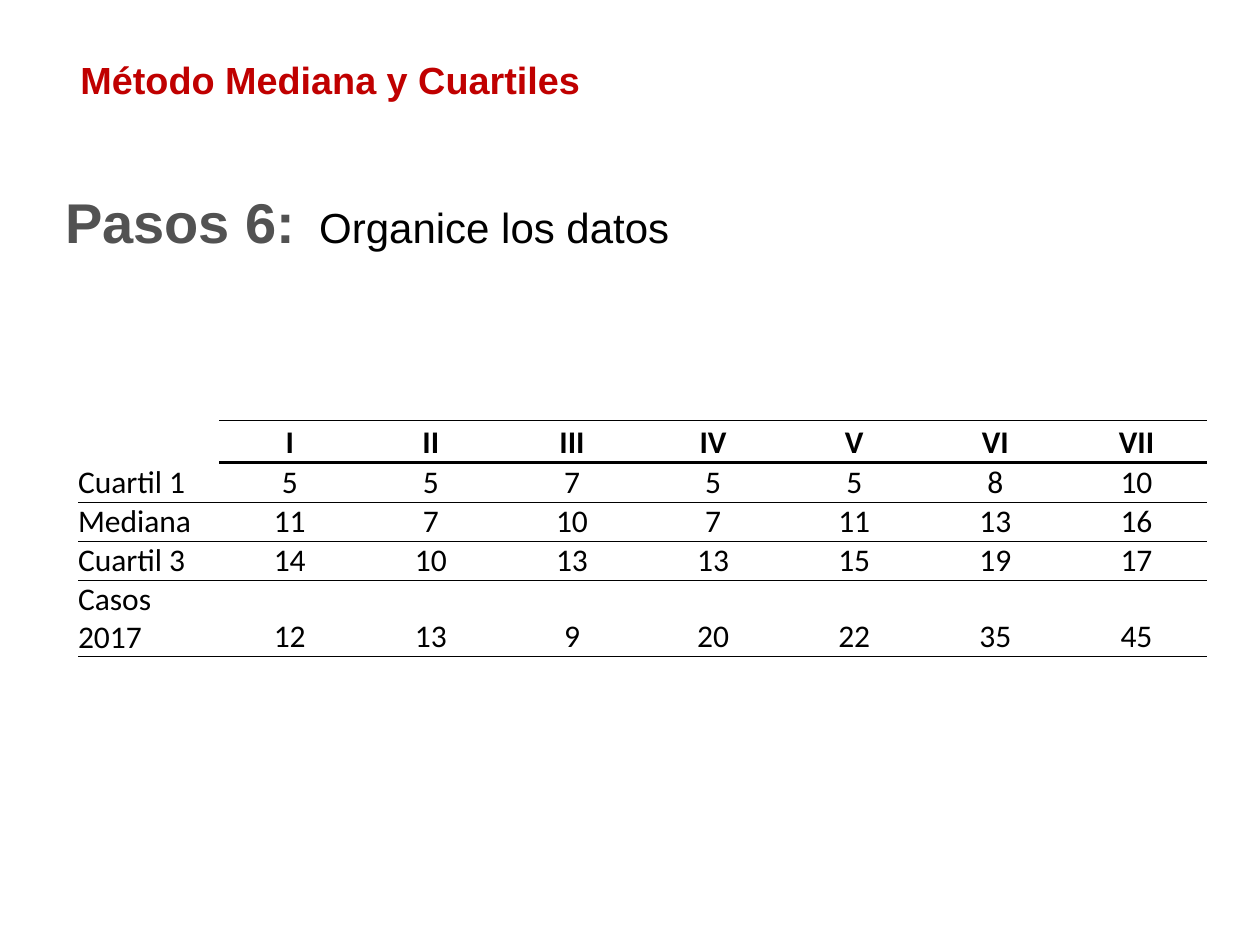
from dataclasses import dataclass

from lxml import etree
from pptx import Presentation
from pptx.dml.color import RGBColor
from pptx.enum.text import MSO_ANCHOR, PP_ALIGN
from pptx.oxml.ns import qn
from pptx.slide import Slide
from pptx.table import _Cell
from pptx.util import Pt

MIDDLE, TOP, BOTTOM = MSO_ANCHOR.MIDDLE, MSO_ANCHOR.TOP, MSO_ANCHOR.BOTTOM
LEFT, CENTER = PP_ALIGN.LEFT, PP_ALIGN.CENTER


@dataclass(frozen=True)
class Theme:
    red: str = "C00000"
    gray: str = "525252"
    black: str = "000000"
    white: str = "FFFFFF"
    heading_font: str = "Arial"
    table_font: str = "Calibri"
    title_size: float = 21.6
    step_size: float = 32
    body_size: float = 24
    table_size: float = 18
    thin: float = 0.5
    thick: float = 2


THEME = Theme()


@dataclass(frozen=True)
class Span:
    text: str
    size: float
    color: str
    bold: bool = False
    font: str = THEME.heading_font


@dataclass(frozen=True)
class Box:
    left: float
    top: float
    width: float
    height: float
    anchor: MSO_ANCHOR
    line_spacing: float
    spans: tuple[Span, ...]


BOXES = (
    Box(38.9, 31, 636.5, 31.7, MIDDLE, 0.9, (
        Span("Método Mediana y Cuartiles", THEME.title_size, THEME.red, True),
    )),
    Box(30.2, 103.7, 680.4, 46, TOP, 1.0, (
        Span("Pasos 6:", THEME.step_size, THEME.gray, True),
        Span(" ", THEME.body_size, THEME.gray, True),
        Span(" Organice los datos", THEME.body_size, THEME.black),
    )),
)

TABLE_LEFT, TABLE_TOP, COLUMN_WIDTH = 44.6, 240.3, 80.67
ROW_HEIGHTS = (23.9, 22.9, 22.3, 22.3, 40.3)
ROWS = (
    ("", "I", "II", "III", "IV", "V", "VI", "VII"),
    ("Cuartil 1", "5", "5", "7", "5", "5", "8", "10"),
    ("Mediana", "11", "7", "10", "7", "11", "13", "16"),
    ("Cuartil 3", "14", "10", "13", "13", "15", "19", "17"),
    ("Casos 2017", "12", "13", "9", "20", "22", "35", "45"),
)


def add_span(para, span: Span) -> None:
    run = para.add_run()
    run.text = span.text
    run.font.name = span.font
    run.font.size = Pt(span.size)
    run.font.bold = span.bold
    run.font.color.rgb = RGBColor.from_string(span.color)


def add_box(page: Slide, box: Box) -> None:
    shape = page.shapes.add_textbox(Pt(box.left), Pt(box.top), Pt(box.width), Pt(box.height))
    frame = shape.text_frame
    frame.word_wrap = True
    frame.vertical_anchor = box.anchor
    para = frame.paragraphs[0]
    para.line_spacing = box.line_spacing
    for span in box.spans:
        add_span(para, span)


def set_borders(cell: _Cell, top: float, bottom: float) -> None:
    properties = cell._tc.get_or_add_tcPr()
    sides = (("a:lnL", 0), ("a:lnR", 0), ("a:lnT", top), ("a:lnB", bottom))
    for position, (tag, width) in enumerate(sides):
        line = etree.Element(qn(tag), w=str(Pt(width)))
        if width:
            fill = etree.SubElement(line, qn("a:solidFill"))
            etree.SubElement(fill, qn("a:srgbClr"), val=THEME.black)
        else:
            etree.SubElement(line, qn("a:noFill"))
        properties.insert(position, line)


def border_below(row: int, column: int) -> float:
    if row == 0:
        return THEME.thick if column else 0
    return THEME.thin


def border_above(row: int, column: int) -> float:
    if row == 0:
        return THEME.thin if column else 0
    return border_below(row - 1, column)


def fill_cell(cell: _Cell, row: int, column: int, text: str) -> None:
    cell.margin_left = cell.margin_right = cell.margin_top = cell.margin_bottom = Pt(0)
    cell.vertical_anchor = BOTTOM
    if row:
        cell.fill.solid()
        cell.fill.fore_color.rgb = RGBColor.from_string(THEME.white)
    else:
        cell.fill.background()
    set_borders(cell, border_above(row, column), border_below(row, column))
    if text:
        para = cell.text_frame.paragraphs[0]
        para.alignment = CENTER if column else LEFT
        add_span(para, Span(text, THEME.table_size, THEME.black, row == 0, THEME.table_font))


def add_quartile_table(page: Slide) -> None:
    column_count = len(ROWS[0])
    table = page.shapes.add_table(
        len(ROWS), column_count, Pt(TABLE_LEFT), Pt(TABLE_TOP),
        Pt(COLUMN_WIDTH * column_count), Pt(sum(ROW_HEIGHTS)),
    ).table
    table.first_row = False
    table.horz_banding = False
    for column in table.columns:
        column.width = Pt(COLUMN_WIDTH)
    for row, (height, texts) in enumerate(zip(ROW_HEIGHTS, ROWS)):
        table.rows[row].height = Pt(height)
        for column, text in enumerate(texts):
            fill_cell(table.cell(row, column), row, column, text)


def main() -> None:
    deck = Presentation()
    deck.slide_width, deck.slide_height = Pt(720), Pt(540)
    page = deck.slides.add_slide(deck.slide_layouts[6])
    page.background.fill.solid()
    page.background.fill.fore_color.rgb = RGBColor.from_string(THEME.white)
    for box in BOXES:
        add_box(page, box)
    add_quartile_table(page)
    deck.save("out.pptx")


if __name__ == "__main__":
    main()
